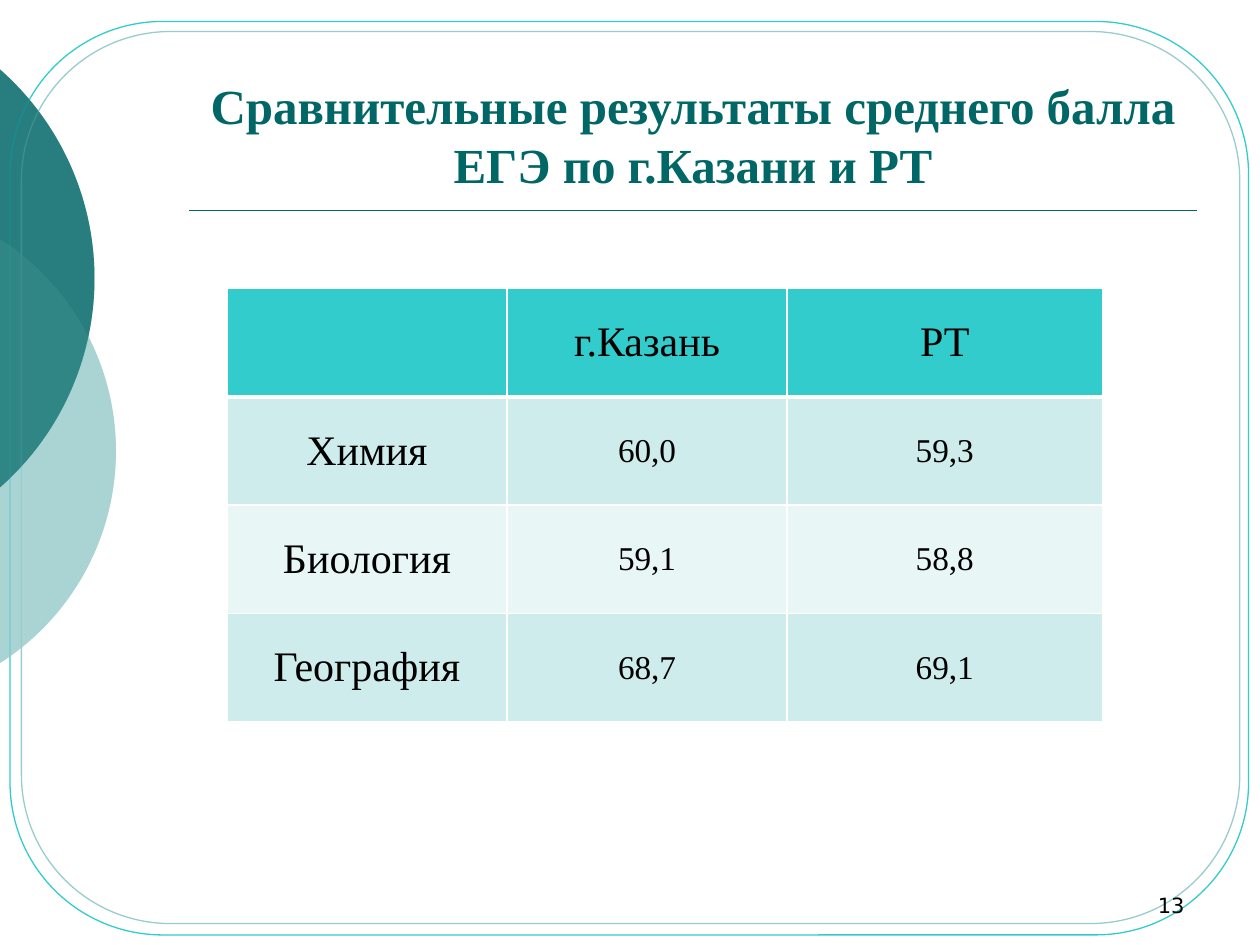
from math import acos, cos, sin, tan

from lxml.etree import SubElement
from pptx import Presentation
from pptx.dml.color import RGBColor
from pptx.enum.shapes import MSO_CONNECTOR, MSO_SHAPE
from pptx.enum.text import MSO_ANCHOR, PP_ALIGN
from pptx.oxml.ns import qn
from pptx.util import Inches, Pt

WIDE, HIGH = 10, 7.5
TEAL = RGBColor(0x00, 0x66, 0x66)
AQUA = RGBColor(0x33, 0xCC, 0xCC)
MIST = RGBColor(0x99, 0xCC, 0xCC)
BANDS = [RGBColor(0xCE, 0xEC, 0xEC), RGBColor(0xE8, 0xF6, 0xF6)]
BLACK = RGBColor(0, 0, 0)
WHITE = RGBColor(255, 255, 255)
SERIF = "Times New Roman"
ROWS = [
    ["", "г.Казань", "РТ"],
    ["Химия", "60,0", "59,3"],
    ["Биология", "59,1", "58,8"],
    ["География", "68,7", "69,1"],
]


def write(frame, text, size, font=SERIF, color=BLACK, bold=False, align=PP_ALIGN.CENTER):
    par = frame.paragraphs[0]
    par.alignment = align
    run = par.add_run()
    run.text = text
    run.font.size = Pt(size)
    run.font.name = font
    run.font.bold = bold
    run.font.color.rgb = color


def add_text(slide, box, text, **style):
    frame = slide.shapes.add_textbox(*map(Inches, box)).text_frame
    frame.word_wrap = True
    frame.vertical_anchor = MSO_ANCHOR.BOTTOM
    write(frame, text, **style)


def draw_arc(trace, radius, reach):
    pull = 4 / 3 * tan(reach / 4)

    def spot(turn, bend=0):
        return (radius * (1 + cos(turn) - bend * sin(turn)),
                radius * (1 + sin(turn) + bend * cos(turn)))

    def step(kind, *points):
        part = SubElement(trace, qn(f"a:{kind}"))
        for x, y in points:
            SubElement(part, qn("a:pt"), x=str(Inches(x)), y=str(Inches(y)))

    for part in list(trace):
        trace.remove(part)
    trace.set("w", str(Inches(2 * radius)))
    trace.set("h", str(Inches(2 * radius)))
    step("moveTo", spot(-reach))
    for start, end in ((-reach, 0), (0, reach)):
        step("cubicBezTo", spot(start, pull), spot(end, -pull), spot(end))
    step("close")


def add_disc(slide, box, color, alpha):
    left, top, size = box
    radius = size / 2
    pen = slide.shapes.build_freeform(0, 0)
    pen.add_line_segments([(Inches(size), 0), (Inches(size), Inches(size))])
    disc = pen.convert_to_shape()
    disc.left, disc.top = Inches(left), Inches(top)
    disc.width = disc.height = Inches(size)
    trace = next(disc._element.iter(qn("a:path")))
    draw_arc(trace, radius, acos(-(left + radius) / radius))
    disc.shadow.inherit = False
    disc.line.fill.background()
    disc.fill.solid()
    disc.fill.fore_color.rgb = color
    tone = next(disc._element.spPr.iter(qn("a:srgbClr")))
    SubElement(tone, qn("a:alpha"), val=str(alpha * 1000))


def add_discs(slide):
    add_disc(slide, (-3.08, 1.58, 4), MIST, 58)
    add_disc(slide, (-3.67, 0, 4.42), TEAL, 60)


def add_frame(slide, box, color):
    frame = slide.shapes.add_shape(MSO_SHAPE.ROUNDED_RECTANGLE, *map(Inches, box))
    frame.adjustments[0] = 0.167
    frame.shadow.inherit = False
    frame.fill.background()
    frame.line.color.rgb = color
    frame.line.width = Pt(0.75)


def add_rule(slide, left, right, top):
    ends = map(Inches, (left, top, right, top))
    rule = slide.shapes.add_connector(MSO_CONNECTOR.STRAIGHT, *ends)
    rule.line.color.rgb = TEAL
    rule.line.width = Pt(1)
    SubElement(rule._element.spPr, qn("a:effectLst"))


def add_edges(cell, widths):
    props = cell._tc.get_or_add_tcPr()
    for spot, (side, width) in enumerate(zip("LRTB", widths)):
        edge = props.makeelement(qn(f"a:ln{side}"), {"w": str(Pt(width))})
        fill = SubElement(edge, qn("a:solidFill"))
        SubElement(fill, qn("a:srgbClr"), val=str(WHITE))
        props.insert(spot, edge)


def add_grid(slide, box, shares):
    shape = slide.shapes.add_table(len(ROWS), len(shares), *map(Inches, box))
    table = shape.table
    for col, share in zip(table.columns, shares):
        col.width = Inches(box[2] * share)
    for r, row in enumerate(ROWS):
        for c, text in enumerate(row):
            cell = table.cell(r, c)
            cell.margin_left = cell.margin_right = Inches(0.07)
            cell.margin_top = cell.margin_bottom = 0
            cell.vertical_anchor = MSO_ANCHOR.MIDDLE
            cell.fill.solid()
            cell.fill.fore_color.rgb = BANDS[(r - 1) % 2] if r else AQUA
            add_edges(cell, (1, 1, 3 if r == 1 else 1, 1 if r else 3))
            if text:
                write(cell.text_frame, text, size=19 if r and c else 24)


def main():
    deck = Presentation()
    deck.slide_width, deck.slide_height = Inches(WIDE), Inches(HIGH)
    slide = deck.slides.add_slide(deck.slide_layouts[6])
    add_discs(slide)
    add_frame(slide, (0.08, 0.17, 9.83, 7.25), AQUA)
    add_frame(slide, (0.17, 0.25, 9.67, 7.08), MIST)
    add_rule(slide, 1.5, 9.5, 1.67)
    add_discs(slide)
    add_text(slide, (1.5, 0.33, 8, 1.25),
             "Сравнительные результаты среднего балла ЕГЭ по г.Казани и РТ",
             size=28, color=TEAL, bold=True)
    add_text(slide, (7.17, 6.83, 2.33, 0.5), "13",
             size=12, font="DejaVu Sans", align=PP_ALIGN.RIGHT)
    add_grid(slide, (1.8, 2.29, 6.95, 3.44), (0.32, 0.32, 0.36))
    deck.save("out.pptx")


if __name__ == "__main__":
    main()
